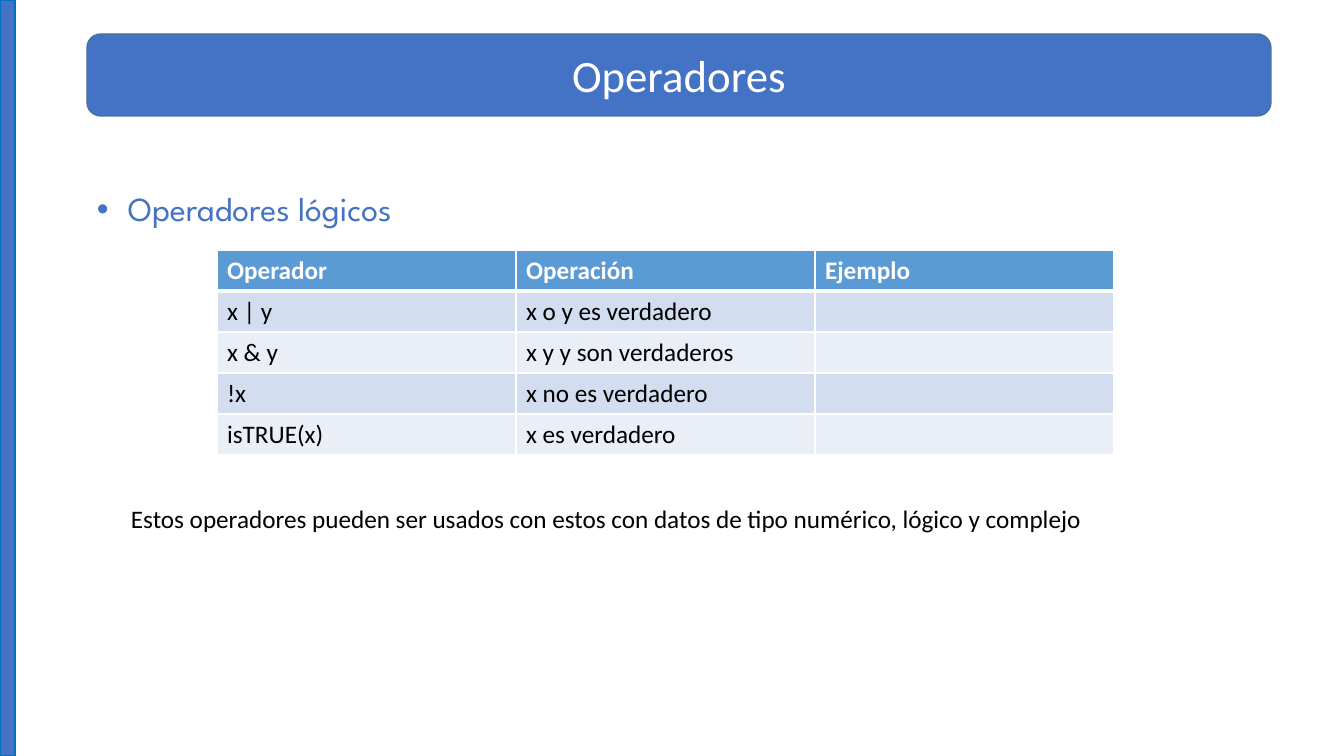
"""Build a slide about logical operators with a table of operations."""
from lxml import etree
from pptx import Presentation, util as u
from pptx.dml.color import RGBColor
from pptx.enum import shapes, text
from pptx.oxml import ns

PX = 914400 / 100.8
SLIDE = (1344, 756)
BLUE, WHITE, BLACK = "4472C4", "FFFFFF", "000000"
HEADER_FILL, BANDS = "5B9BD5", ("D2DEEF", "EAEFF7")

TITLE = "Operadores"
TOPIC = "Operadores lógicos"
NOTE = "Estos operadores pueden ser usados con estos con datos de tipo numérico, lógico y complejo"
ROWS = [
    ("Operador", "Operación", "Ejemplo"),
    ("x | y", "x o y es verdadero", ""),
    ("x & y", "x y y son verdaderos", ""),
    ("!x", "x no es verdadero", ""),
    ("isTRUE(x)", "x es verdadero", ""),
]
TITLE_BOX = (87, 34, 1184, 82)
SIDE_BAR = (0, 0, 15, 756)
TOPIC_BOX = (87, 143, 1136, 79)
NOTE_BOX = (121, 498, 1033, 40)
TABLE_CORNER = (217, 250)
CELL = (299, 41)
BULLET_INDENT = 31


def px(value):
    return u.Emu(round(value * PX))


def color(value):
    return RGBColor.from_string(value)


def write(frame, words, size, tint, font="Calibri", bold=False):
    frame.text = words
    para = frame.paragraphs[0]
    for style in [para.font] + [span.font for span in para.runs]:
        style.name, style.size, style.bold = font, u.Pt(size), bold
        style.color.rgb = color(tint)
    return para


def add_panel(page, kind, place, line):
    panel = page.shapes.add_shape(kind, *map(px, place))
    panel.shadow.inherit = False
    panel.fill.solid()
    panel.fill.fore_color.rgb = color(BLUE)
    panel.line.color.rgb = color(line)
    panel.line.width = u.Pt(1)
    return panel


def add_text(page, place, *style):
    box = page.shapes.add_textbox(*map(px, place))
    box.text_frame.word_wrap = True
    return write(box.text_frame, *style)


def add_bullet(para):
    props = para._p.get_or_add_pPr()
    props.set("marL", str(px(BULLET_INDENT)))
    props.set("indent", str(-px(BULLET_INDENT)))
    etree.SubElement(props, ns.qn("a:buFont")).set("typeface", "Arial")
    etree.SubElement(props, ns.qn("a:buChar")).set("char", "•")


def add_borders(cell, widths):
    props = cell._tc.get_or_add_tcPr()
    for side, width in zip("LRTB", widths):
        line = etree.SubElement(props, ns.qn("a:ln" + side), w=str(u.Pt(width)))
        fill = etree.SubElement(line, ns.qn("a:solidFill"))
        etree.SubElement(fill, ns.qn("a:srgbClr")).set("val", WHITE)


def add_operator_table(page):
    width, height = CELL
    size = (width * len(ROWS[0]), height * len(ROWS))
    table = page.shapes.add_table(len(ROWS), len(ROWS[0]), *map(px, TABLE_CORNER + size)).table
    for column in table.columns:
        column.width = px(width)
    for r, words in enumerate(ROWS):
        header = r == 0
        table.rows[r].height = px(height)
        for c, word in enumerate(words):
            cell = table.cell(r, c)
            write(cell.text_frame, word, 18, WHITE if header else BLACK, bold=header)
            add_borders(cell, (1, 1, 3 if r == 1 else 1, 3 if header else 1))
            cell.fill.solid()
            cell.fill.fore_color.rgb = color(HEADER_FILL if header else BANDS[(r - 1) % 2])


def main():
    deck = Presentation()
    deck.slide_width, deck.slide_height = map(px, SLIDE)
    page = deck.slides.add_slide(deck.slide_layouts[6])

    title = add_panel(page, shapes.MSO_SHAPE.ROUNDED_RECTANGLE, TITLE_BOX, "43739E")
    title.text_frame.vertical_anchor = text.MSO_ANCHOR.MIDDLE
    write(title.text_frame, TITLE, 32, WHITE).alignment = text.PP_ALIGN.CENTER
    add_panel(page, shapes.MSO_SHAPE.RECTANGLE, SIDE_BAR, "0070C0")

    topic = add_text(page, TOPIC_BOX, TOPIC, 24, BLUE, "League Spartan")
    topic.line_spacing = 2.0
    add_bullet(topic)
    add_operator_table(page)
    add_text(page, NOTE_BOX, NOTE, 18, BLACK)
    deck.save("out.pptx")


if __name__ == "__main__":
    main()
